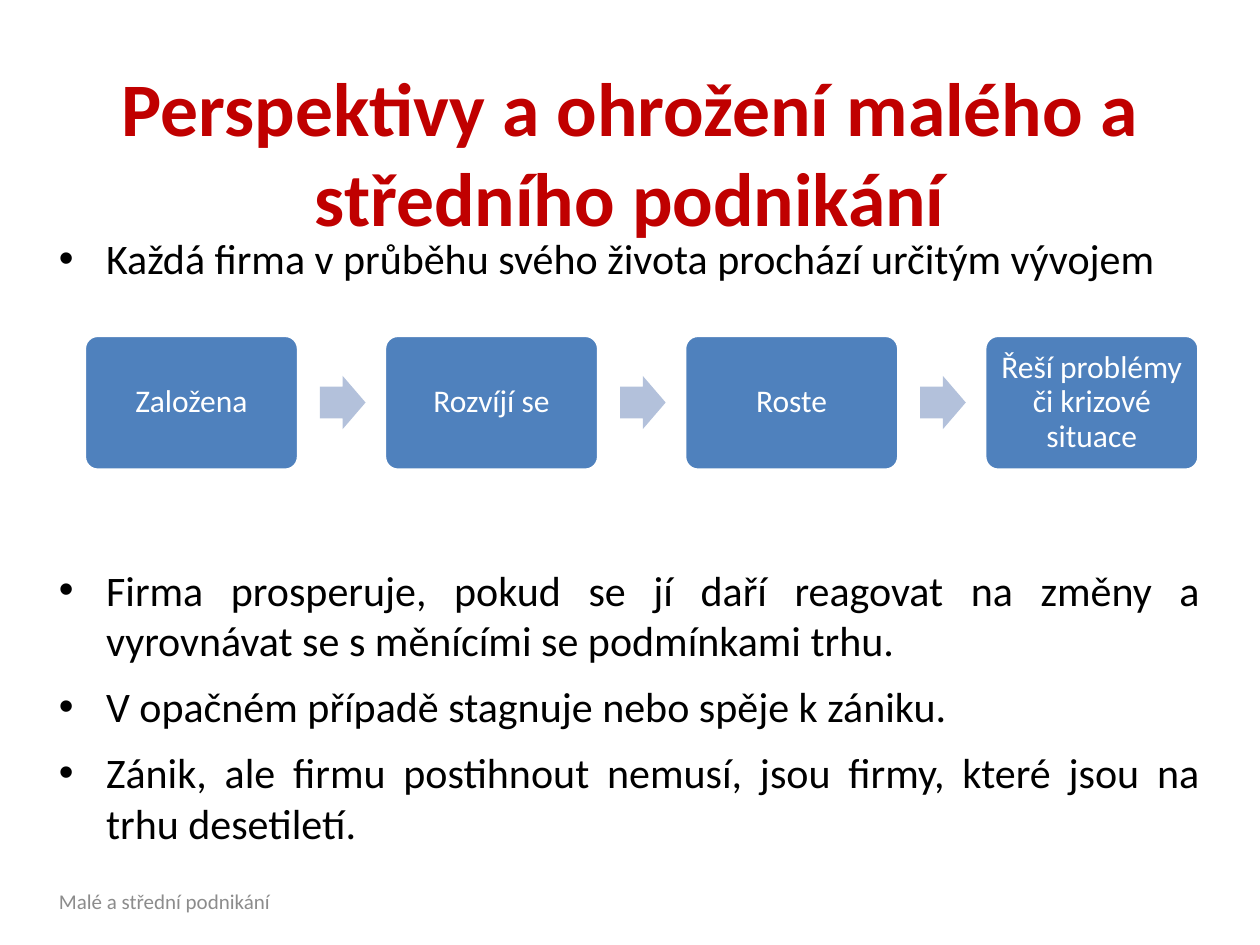
from lxml.etree import SubElement
from pptx import Presentation
from pptx.dml.color import RGBColor
from pptx.enum.shapes import MSO_SHAPE
from pptx.enum.text import MSO_ANCHOR, PP_ALIGN
from pptx.oxml.ns import qn
from pptx.util import Cm, Pt

COLOURS = {"title": "C00000", "body": "000000", "footer": "8C8C8C",
           "step": "4F81BD", "arrow": "B3C1DB", "white": "FFFFFF"}


def write(box, lines, colour, para_format, font_format, anchor=MSO_ANCHOR.TOP, bullet=False):
    """Fill the box with one paragraph per line; the first gets no space before."""
    frame = box.text_frame
    frame.word_wrap = True
    frame.vertical_anchor = anchor
    for index, line in enumerate(lines):
        para = frame.add_paragraph() if index else frame.paragraphs[0]
        for name, value in para_format.items():
            if index or name != "space_before":
                setattr(para, name, value)
        if bullet:
            properties = para._p.get_or_add_pPr()
            properties.set("marL", str(Cm(0.95)))
            properties.set("indent", str(-Cm(0.95)))
            SubElement(properties, qn("a:buFont")).set("typeface", "Arial")
            SubElement(properties, qn("a:buChar")).set("char", "•")
        span = para.add_run()
        span.text = line
        span.font.name = "Calibri"
        span.font.color.rgb = RGBColor.from_string(COLOURS[colour])
        for name, value in font_format.items():
            setattr(span.font, name, value)


def add_filled(page, kind, place, colour, adjustments):
    shape = page.shapes.add_shape(kind, *map(Cm, place))
    shape.shadow.inherit = False
    shape.fill.solid()
    shape.fill.fore_color.rgb = RGBColor.from_string(COLOURS[colour])
    for index, value in enumerate(adjustments):
        shape.adjustments[index] = value
    return shape


deck = Presentation()
deck.slide_width, deck.slide_height = Cm(25.4), Cm(19.05)
page = deck.slides.add_slide(deck.slide_layouts[6])

title = page.shapes.add_textbox(Cm(0), Cm(2.01), Cm(25.4), Cm(2.08))
write(title, ["Perspektivy a ohrožení malého a středního podnikání"], "title",
      {"alignment": PP_ALIGN.CENTER}, {"size": Pt(43.2), "bold": True}, MSO_ANCHOR.MIDDLE)

# Bullets above and below the process
bullet_blocks = [
    (4.57, 1.3, ["Každá firma v průběhu svého života prochází určitým vývojem"]),
    (11.25, 6.2, [
        "Firma prosperuje, pokud se jí daří reagovat na změny a "
        "vyrovnávat se s měnícími se podmínkami trhu.",
        "V opačném případě stagnuje nebo spěje k zániku.",
        "Zánik, ale firmu postihnout nemusí, jsou firmy, které jsou na trhu desetiletí.",
    ]),
]
for top, height, lines in bullet_blocks:
    box = page.shapes.add_textbox(Cm(0.94), Cm(top), Cm(23.5), Cm(height))
    write(box, lines, "body", {"alignment": PP_ALIGN.JUSTIFY, "space_before": Pt(9)},
          {"size": Pt(24)}, bullet=True)

footer = page.shapes.add_textbox(Cm(0.94), Cm(17.65), Cm(8.05), Cm(1.02))
write(footer, ["Malé a střední podnikání"], "footer", {}, {"size": Pt(12)}, MSO_ANCHOR.MIDDLE)

# Process: equal steps with an arrow between neighbours
steps = ["Založena", "Rozvíjí se", "Roste", "Řeší problémy či krizové situace"]
for index, label in enumerate(steps):
    left = 1.7 + index * 6.05
    step = add_filled(page, MSO_SHAPE.ROUNDED_RECTANGLE, (left, 6.76, 4.32, 2.72), "step", [0.1])
    step.line.color.rgb = RGBColor.from_string(COLOURS["white"])
    step.line.width = Pt(2)
    for side in ("left", "right", "top", "bottom"):
        setattr(step.text_frame, f"margin_{side}", Cm(0.18))
    write(step, [label], "white", {"alignment": PP_ALIGN.CENTER, "line_spacing": 0.9},
          {"size": Pt(18)}, MSO_ANCHOR.MIDDLE)
    if index < len(steps) - 1:
        arrow = add_filled(page, MSO_SHAPE.RIGHT_ARROW, (left + 4.75, 7.58, 0.92, 1.07),
                           "arrow", [0.6, 0.5])
        arrow.line.fill.background()

deck.save("out.pptx")
